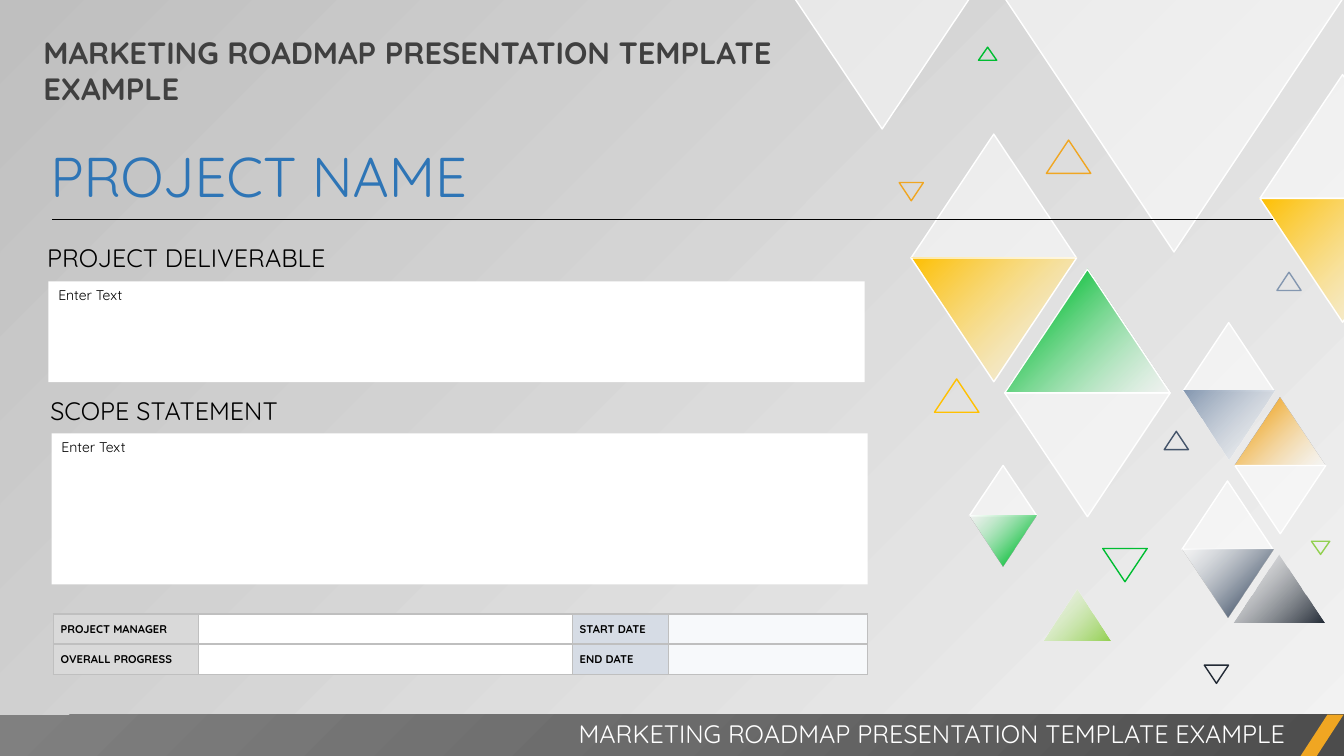
from dataclasses import dataclass

from lxml.etree import SubElement
from pptx import Presentation
from pptx.dml.color import RGBColor
from pptx.enum.shapes import MSO_CONNECTOR, MSO_SHAPE as Shape
from pptx.enum.text import MSO_ANCHOR as Anchor, MSO_AUTO_SIZE as AutoSize, PP_ALIGN as Align
from pptx.oxml.ns import qn
from pptx.util import Cm, Pt


@dataclass(frozen=True)
class Theme:
    font: str = "Quicksand"
    white: str = "FFFFFF"
    black: str = "000000"
    heading: str = "404040"
    accent: str = "2E75B6"
    yellow: str = "FFC000"
    green: str = "00BD32"
    orange: str = "F0A622"
    lime: str = "92D050"
    blue: str = "8497B0"
    slate: str = "44546A"
    dark: str = "222A35"
    border: str = "BFBFBF"
    label_fills: tuple = ("D9D9D9", "D6DCE5")
    value_fills: tuple = ("FFFFFF", "F7F9FB")
    background: tuple = ((0, "F2F2F2", 100), (100, "BFBFBF", 100))
    footer: tuple = ((0, "4C4C4C", 100), (50, "6B6B6B", 100), (100, "808080", 100))
    title_size: int = 22
    project_size: int = 40
    section_size: int = 18
    body_size: int = 10
    table_size: int = 8


theme = Theme()
TITLE = "MARKETING ROADMAP PRESENTATION TEMPLATE EXAMPLE"
PROJECT = "PROJECT NAME"
# heading, heading position, prompt, box position, box height
SECTIONS = [
    ("PROJECT DELIVERABLE", (0.94, 5.99), "Enter Text", (1.22, 7.09), 2.54),
    ("SCOPE STATEMENT", (1.02, 9.83), "Enter Text", (1.3, 10.92), 3.81),
]
DETAILS = [
    ["PROJECT MANAGER", "", "START DATE", ""],
    ["OVERALL PROGRESS", "", "END DATE", ""],
]
COLUMN_WIDTHS = (3.66, 9.42, 2.41, 5.03)
ROW_HEIGHT = 0.76
SLIDE_WIDTH, SLIDE_HEIGHT = 33.87, 19.05

BIG, MEDIUM, SMALL = (4.17, 3.12), (2.29, 1.72), (1.7, 1.27)
VEIL = [(0, theme.white, 50)]


def fade_out(color):
    return [(0, color, 100), (100, theme.white, 50)]


def fade_in(color):
    return [(0, theme.white, 50), (82, color, 100)]


# left, top, size of one half, upper fill, lower fill
DIAMONDS = [
    (22.96, 3.38, BIG, VEIL, fade_out(theme.yellow)),
    (25.32, 6.78, BIG, fade_in(theme.green), VEIL),
    (31.75, 1.88, BIG, VEIL, fade_out(theme.yellow)),
    (29.79, 12.12, MEDIUM, VEIL, fade_in(theme.slate)),
    (29.82, 8.13, MEDIUM, VEIL, fade_out(theme.blue)),
    (31.12, 10.01, MEDIUM, fade_in(theme.orange), VEIL),
    (24.43, 11.73, SMALL, VEIL, fade_in(theme.green)),
]
# left, top, size, fill, points down
SINGLES = [
    (25.32, -0.05, (8.53, 6.4), VEIL, True),
    (20.02, -0.05, (4.42, 3.3), VEIL, True),
    (31.09, 13.97, MEDIUM, fade_out(theme.dark), False),
    (26.29, 14.86, SMALL, fade_out(theme.lime), False),
]
WIDE, NARROW, TINY = (1.12, 0.84), (0.61, 0.46), (0.46, 0.33)
# left, top, size, line color, points down
OUTLINES = [
    (27.79, 13.82, WIDE, theme.green, True),
    (23.55, 9.55, WIDE, theme.yellow, False),
    (26.37, 3.53, WIDE, theme.orange, False),
    (29.34, 10.87, NARROW, theme.slate, False),
    (30.35, 16.76, NARROW, theme.dark, True),
    (22.66, 4.6, NARROW, theme.orange, True),
    (32.18, 6.86, NARROW, theme.blue, False),
    (24.66, 1.19, TINY, theme.green, False),
    (33.05, 13.64, TINY, theme.lime, True),
]


def rgb(color):
    return RGBColor.from_string(color)


def add_color(parent, color, opacity=100):
    node = SubElement(parent, qn("a:srgbClr"), val=color)
    if opacity < 100:
        SubElement(node, qn("a:alpha"), val=str(opacity * 1000))


def paint(fill, stops):
    """Fill with (position, color, opacity) stops; a single stop gives a solid fill."""
    if len(stops) == 1:
        fill.solid()
        fill.fore_color.rgb = rgb(stops[0][1])
        holder = fill._xPr.find(qn("a:solidFill"))
        holder.clear()
        add_color(holder, *stops[0][1:])
        return
    fill.gradient()
    fill.gradient_angle = 135
    stop_list = fill._xPr.find(qn("a:gradFill")).find(qn("a:gsLst"))
    stop_list.clear()
    for position, color, opacity in stops:
        stop = SubElement(stop_list, qn("a:gs"), pos=str(position * 1000))
        add_color(stop, color, opacity)


def add_shape(shapes, kind, frame, stops=None, line=None):
    shape = shapes.add_shape(kind, *map(Cm, frame))
    shape.shadow.inherit = False
    if stops:
        paint(shape.fill, stops)
    else:
        shape.fill.background()
    if line:
        shape.line.color.rgb = rgb(line)
        shape.line.width = Pt(1)
    else:
        shape.line.fill.background()
    return shape


def add_triangle(shapes, left, top, size, stops, line, down):
    triangle = add_shape(shapes, Shape.ISOSCELES_TRIANGLE, (left, top, *size), stops, line)
    triangle.rotation = 180 if down else 0


def write(frame, text, size, color, bold=False, align=Align.LEFT):
    frame.word_wrap = True
    frame.auto_size = AutoSize.NONE
    frame.vertical_anchor = Anchor.TOP
    style(frame.paragraphs[0], text, size, color, bold, align)


def style(para, text, size, color, bold=False, align=Align.LEFT):
    para.text = text
    para.alignment = align
    para.font.name, para.font.size, para.font.bold = theme.font, Pt(size), bold
    para.font.color.rgb = rgb(color)


def add_text(shapes, frame, *content, **options):
    write(shapes.add_textbox(*map(Cm, frame)).text_frame, *content, **options)


def add_triangles(shapes):
    for left, top, size, upper, lower in DIAMONDS:
        for row, stops in enumerate((upper, lower)):
            line = theme.white if stops is VEIL or size is BIG else None
            add_triangle(shapes, left, top + row * size[1], size, stops, line, row == 1)
    for left, top, size, stops, down in SINGLES:
        add_triangle(shapes, left, top, size, stops, theme.white if stops is VEIL else None, down)
    for left, top, size, color, down in OUTLINES:
        add_triangle(shapes, left, top, size, None, color, down)


def add_footer(shapes):
    band = add_shape(shapes, Shape.RECTANGLE, (0, 18.01, SLIDE_WIDTH, 1.04), theme.footer)
    gradient = band.fill._xPr.find(qn("a:gradFill"))
    gradient.remove(gradient.find(qn("a:lin")))
    center = SubElement(gradient, qn("a:path"), path="circle")
    SubElement(center, qn("a:fillToRect"), l="100000", t="100000")
    slash = add_shape(shapes, Shape.PARALLELOGRAM, (32.77, 18.01, 1.09, 1.05), [(0, theme.orange, 100)])
    slash.adjustments[0] = 0.65
    add_text(shapes, (13.34, 17.98, 19.3, 1.02), TITLE, theme.section_size, theme.white, align=Align.RIGHT)


def add_details(shapes):
    frame = (1.35, 15.47, sum(COLUMN_WIDTHS), ROW_HEIGHT * len(DETAILS))
    table = shapes.add_table(len(DETAILS), len(COLUMN_WIDTHS), *map(Cm, frame)).table
    table.first_row = table.horz_banding = False
    for column, width in zip(table.columns, COLUMN_WIDTHS):
        column.width = Cm(width)
    for row, texts in enumerate(DETAILS):
        table.rows[row].height = Cm(ROW_HEIGHT)
        for column, text in enumerate(texts):
            cell = table.cell(row, column)
            cell.margin_left = cell.margin_right = Cm(0.18)
            cell.margin_top = cell.margin_bottom = 0
            cell.vertical_anchor = Anchor.MIDDLE
            for side in ("lnL", "lnR", "lnT", "lnB"):
                edge = SubElement(cell._tc.get_or_add_tcPr(), qn(f"a:{side}"), w=str(Pt(1)))
                add_color(SubElement(edge, qn("a:solidFill")), theme.border)
            fills = theme.value_fills if column % 2 else theme.label_fills
            paint(cell.fill, [(0, fills[column // 2], 100)])
            para = cell.text_frame.paragraphs[0]
            style(para, text, theme.table_size, theme.black, bold=True)
            if not text:
                SubElement(para._p, qn("a:endParaRPr"), sz=str(theme.table_size * 100))


def main():
    deck = Presentation()
    deck.slide_width, deck.slide_height = Cm(SLIDE_WIDTH), Cm(SLIDE_HEIGHT)
    page = deck.slides.add_slide(deck.slide_layouts[5])
    paint(page.background.fill, theme.background)
    shapes = page.shapes
    title = shapes.title
    title.left, title.top, title.width, title.height = map(Cm, (0.84, 0.71, 21.87, 2.13))
    write(title.text_frame, TITLE, theme.title_size, theme.heading, bold=True)
    add_triangles(shapes.add_group_shape().shapes)
    add_footer(shapes)
    add_text(shapes, (1.02, 3.43, 31.17, 1.96), PROJECT, theme.project_size, theme.accent)
    rule = shapes.add_connector(MSO_CONNECTOR.STRAIGHT, *map(Cm, (1.32, 5.54, 32.08, 5.54)))
    rule.line.color.rgb, rule.line.width = rgb(theme.black), Pt(0.5)
    SubElement(rule._element.spPr, qn("a:effectLst"))
    add_details(shapes)
    for heading, spot, prompt, corner, height in SECTIONS:
        add_text(shapes, (*spot, 7.75, 1.02), heading, theme.section_size, theme.black)
        box = add_shape(shapes, Shape.RECTANGLE, (*corner, 20.57, height), [(0, theme.white, 100)])
        write(box.text_frame, prompt, theme.body_size, theme.black)
    deck.save("out.pptx")


if __name__ == "__main__":
    main()
